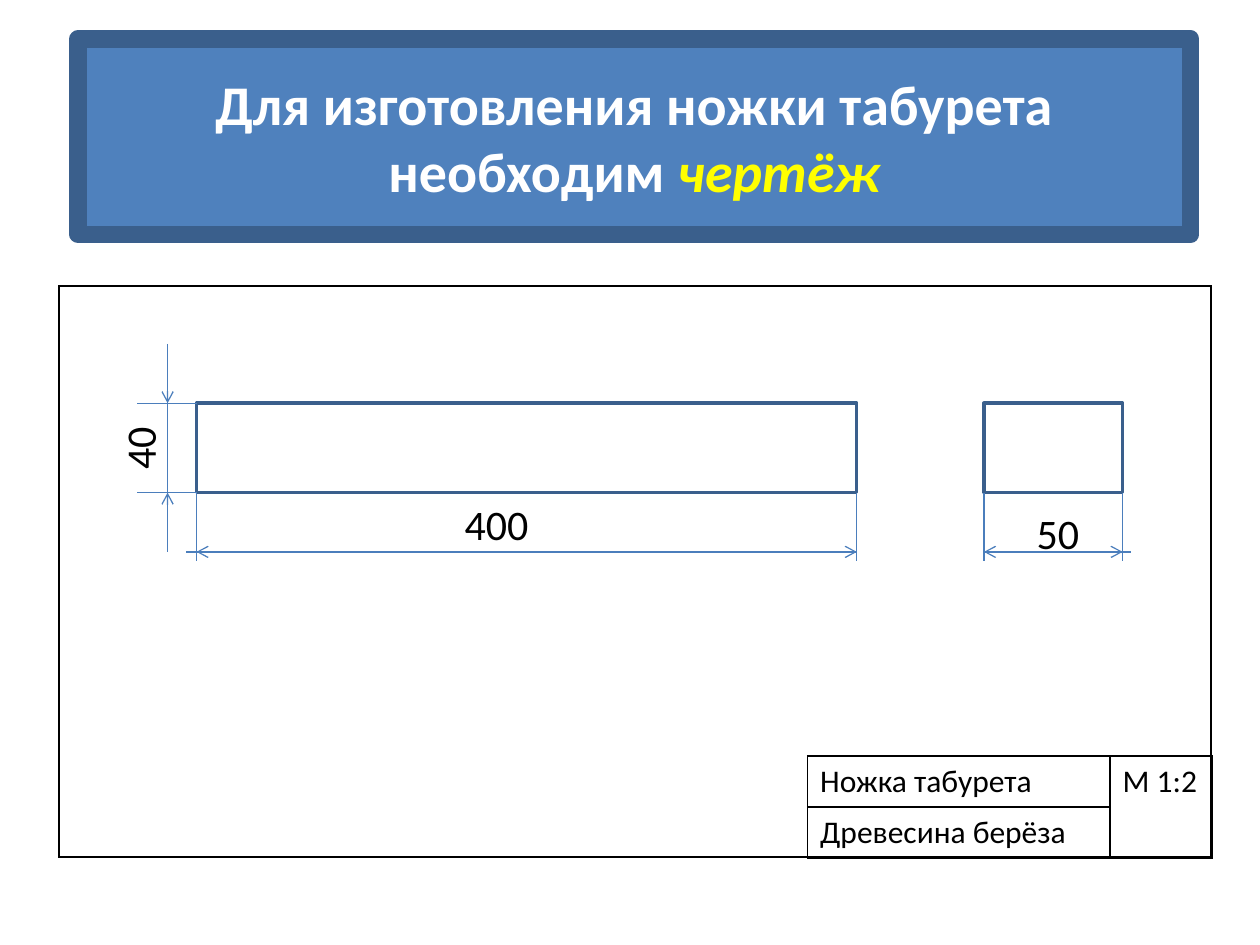
"""Build a slide with the working drawing of a stool leg."""
from typing import NamedTuple

from lxml import etree
from pptx import Presentation
from pptx.dml.color import RGBColor
from pptx.enum.shapes import MSO_CONNECTOR, MSO_SHAPE
from pptx.enum.text import MSO_ANCHOR, MSO_AUTO_SIZE, PP_ALIGN
from pptx.oxml.ns import qn
from pptx.util import Inches, Pt

STRAIGHT = MSO_CONNECTOR.STRAIGHT
RECTANGLE = MSO_SHAPE.RECTANGLE
MIDDLE = MSO_ANCHOR.MIDDLE
CENTER = PP_ALIGN.CENTER
NO_AUTOFIT = MSO_AUTO_SIZE.NONE

FONT = "Calibri"
BLUE, DARK_BLUE, LINE_BLUE = "4F81BD", "3A5F8C", "4B7EBC"
WHITE, BLACK, YELLOW = "FFFFFF", "000000", "FFFF00"

TOP, BOTTOM = 3.2, 3.91
LEG_LEFT, LEG_RIGHT = 1.56, 6.8
END_LEFT, END_RIGHT = 7.81, 8.91
DIMENSION_X, DIMENSION_Y = 1.33, 4.38
EXTENSION_X, EXTENSION_Y = 1.09, 4.45


class Segment(NamedTuple):
    x1: float
    y1: float
    x2: float
    y2: float
    arrow: bool = False


class Dimension(NamedTuple):
    text: str
    left: float
    top: float
    width: float
    rotation: int = 0


SEGMENTS = [
    *(Segment(x, BOTTOM, x, EXTENSION_Y)
      for x in (LEG_LEFT, LEG_RIGHT, END_LEFT, END_RIGHT)),
    *(Segment(LEG_LEFT, y, EXTENSION_X, y) for y in (TOP, BOTTOM)),
    Segment(DIMENSION_X, 2.73, DIMENSION_X, DIMENSION_Y),
    Segment(1.48, DIMENSION_Y, LEG_RIGHT, DIMENSION_Y),
    Segment(END_LEFT, DIMENSION_Y, 8.98, DIMENSION_Y),
    Segment(DIMENSION_X, 4.06, DIMENSION_X, BOTTOM, True),
    Segment(DIMENSION_X, 2.97, DIMENSION_X, TOP, True),
    Segment(2.03, DIMENSION_Y, LEG_LEFT, DIMENSION_Y, True),
    Segment(6.25, DIMENSION_Y, LEG_RIGHT, DIMENSION_Y, True),
    Segment(7.97, DIMENSION_Y, END_RIGHT, DIMENSION_Y, True),
    Segment(8.13, DIMENSION_Y, END_LEFT, DIMENSION_Y, True),
]
DIMENSIONS = [
    Dimension("400", 3.59, 3.91, 0.86),
    Dimension("50", 8.13, 3.98, 0.86),
    Dimension("40", 0.79, 3.26, 0.63, 270),
]


def rgb(value: str) -> RGBColor:
    return RGBColor.from_string(value)


def style_font(font, size: float, color: str, bold: bool = False) -> None:
    font.name, font.size, font.bold = FONT, Pt(size), bold
    font.color.rgb = rgb(color)


def style_shape(shape, fill: str, line_width: float) -> None:
    shape.fill.solid()
    shape.fill.fore_color.rgb = rgb(fill)
    shape.line.color.rgb = rgb(DARK_BLUE)
    shape.line.width = Pt(line_width)


def format_title(title) -> None:
    title.left, title.top = Inches(0.62), Inches(0.31)
    title.width, title.height = Inches(8.83), Inches(1.55)
    outline = etree.SubElement(title.element.spPr, qn("a:prstGeom"), prst="roundRect")
    etree.SubElement(outline, qn("a:avLst"))
    style_shape(title, BLUE, 10)
    frame = title.text_frame
    frame.word_wrap, frame.auto_size = True, NO_AUTOFIT
    frame.vertical_anchor = MIDDLE
    heading = frame.paragraphs[0]
    heading.alignment = CENTER
    for text, color in (("Для изготовления ножки табурета необходим ", WHITE),
                        ("чертёж", YELLOW)):
        run = heading.add_run()
        run.text = text
        style_font(run.font, 32, color, True)
        run.font.italic = color == YELLOW


def add_borders(cell) -> None:
    properties = cell._tc.get_or_add_tcPr()
    for index, side in enumerate(("lnL", "lnR", "lnT", "lnB")):
        border = etree.Element(qn(f"a:{side}"), w=str(Pt(1)))
        fill = etree.SubElement(border, qn("a:solidFill"))
        etree.SubElement(fill, qn("a:srgbClr"), val=BLACK)
        properties.insert(index, border)


def add_grid(slide, left: float, top: float, columns: list[float], rows: list[float]):
    table = slide.shapes.add_table(
        len(rows), len(columns), Inches(left), Inches(top),
        Inches(sum(columns)), Inches(sum(rows))).table
    table.first_row = table.horz_banding = False
    for column, width in zip(table.columns, columns):
        column.width = Inches(width)
    for row, height in zip(table.rows, rows):
        row.height = Inches(height)
    for cell in table.iter_cells():
        cell.fill.background()
        add_borders(cell)
    return table


def add_title_block(slide) -> None:
    block = add_grid(slide, 6.41, 6, [2.4, 0.81], [0.4, 0.4])
    block.cell(0, 1).merge(block.cell(1, 1))
    for row, column, text in ((0, 0, "Ножка табурета"), (0, 1, "М 1:2"),
                              (1, 0, "Древесина берёза")):
        entry = block.cell(row, column).text_frame
        entry.text = text
        style_font(entry.paragraphs[0].runs[0].font, 18, BLACK)


def add_view(slide, left: float, right: float) -> None:
    view = slide.shapes.add_shape(RECTANGLE, Inches(left), Inches(TOP),
                                  Inches(right - left), Inches(BOTTOM - TOP))
    view.shadow.inherit = False
    style_shape(view, WHITE, 2)


def add_segment(slide, segment: Segment) -> None:
    ends = (Inches(value) for value in segment[:4])
    connector = slide.shapes.add_connector(STRAIGHT, *ends)
    connector.line.color.rgb = rgb(LINE_BLUE)
    connector.line.width = Pt(0.75)
    if segment.arrow:
        etree.SubElement(connector.line._get_or_add_ln(), qn("a:tailEnd"), type="arrow")
    etree.SubElement(connector._element.spPr, qn("a:effectLst"))


def add_dimension(slide, dimension: Dimension) -> None:
    label = slide.shapes.add_textbox(Inches(dimension.left), Inches(dimension.top),
                                     Inches(dimension.width), Inches(0.5))
    label.rotation = dimension.rotation
    label.text_frame.word_wrap = True
    label.text_frame.text = dimension.text
    style_font(label.text_frame.paragraphs[0].runs[0].font, 24, BLACK)


def main() -> None:
    presentation = Presentation()
    presentation.slide_width, presentation.slide_height = Inches(10), Inches(7.5)
    slide = presentation.slides.add_slide(
        presentation.slide_layouts.get_by_name("Title Only"))
    format_title(slide.shapes.title)
    sheet = add_grid(slide, 0.47, 2.27, [9.14], [4.53]).cell(0, 0)
    sheet.fill.solid()
    sheet.fill.fore_color.rgb = rgb(WHITE)
    add_title_block(slide)
    add_view(slide, LEG_LEFT, LEG_RIGHT)
    add_view(slide, END_LEFT, END_RIGHT)
    for segment in SEGMENTS:
        add_segment(slide, segment)
    for dimension in DIMENSIONS:
        add_dimension(slide, dimension)
    presentation.save("out.pptx")


if __name__ == "__main__":
    main()
